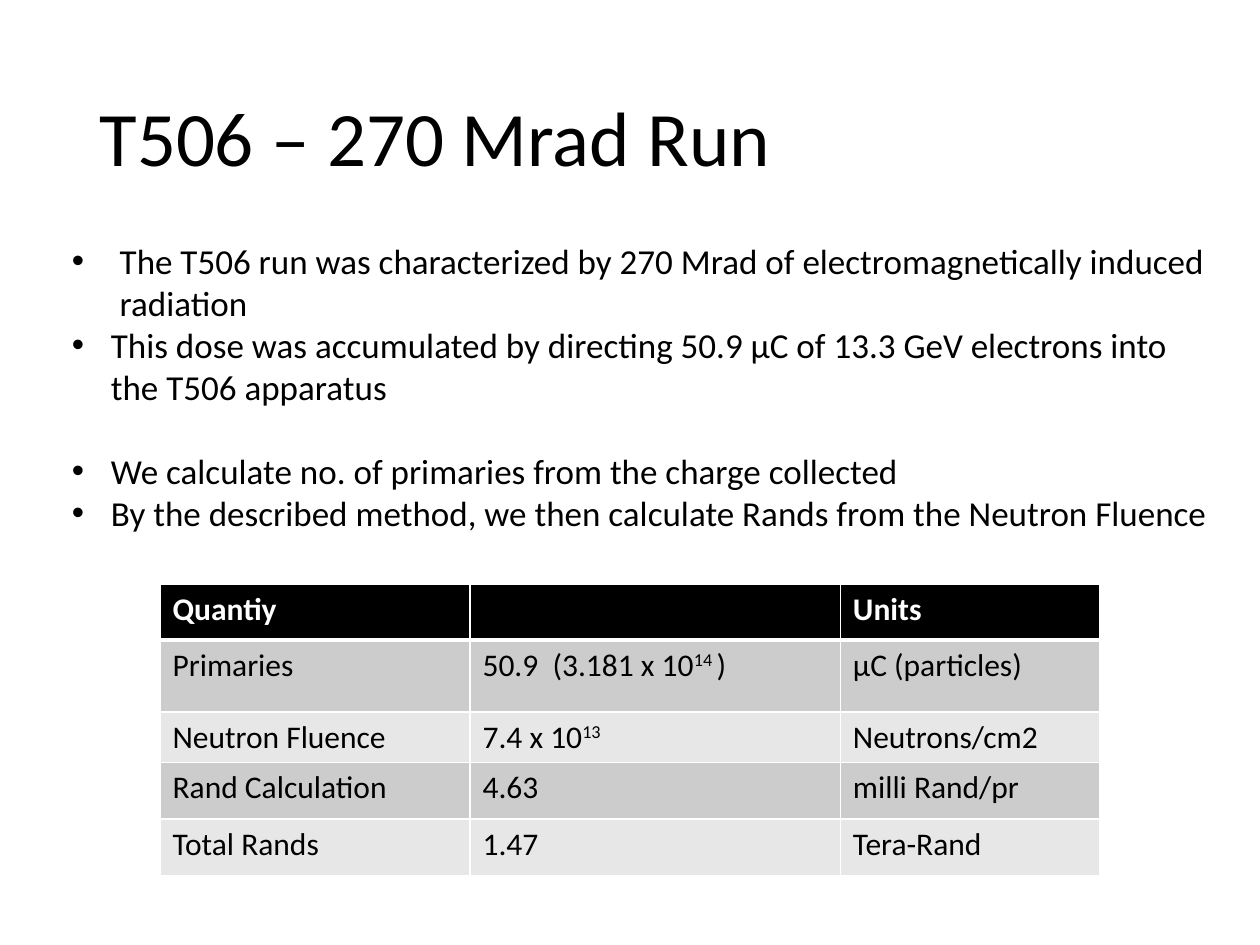
"""Build the slide on the T506 run with its bullet list and results table."""
from lxml.etree import SubElement
from pptx import Presentation
from pptx.dml.color import RGBColor
from pptx.enum.text import MSO_ANCHOR, MSO_AUTO_SIZE, PP_ALIGN
from pptx.oxml.ns import qn
from pptx.util import Inches, Pt

TITLE = "T506 – 270 Mrad Run"
POINTS = [
    ("The T506 run was characterized by 270 Mrad of electromagnetically induced radiation", 0.38, 0),
    ("This dose was accumulated by directing 50.9 μC of 13.3 GeV electrons into the T506 apparatus", 0.31, 0),
    ("We calculate no. of primaries from the charge collected", 0.31, 24),
    ("By the described method, we then calculate Rands from the Neutron Fluence", 0.31, 0),
]
RESULTS = [
    ("Quantiy", "", "Units"),
    ("Primaries", "50.9  (3.181 x 10^14 ^)", "μC (particles)"),
    ("Neutron Fluence", "7.4 x 10^13", "Neutrons/cm2"),
    ("Rand Calculation", "4.63", "milli Rand/pr"),
    ("Total Rands", "1.47", "Tera-Rand"),
]
COLUMN_WIDTHS = [2.46, 2.94, 2.06]
ROW_HEIGHTS = [0.44, 0.57, 0.4, 0.45, 0.45]
BLACK, WHITE = "000000", "FFFFFF"
BANDS = ["E7E7E7", "CCCCCC"]


def color(value):
    return RGBColor.from_string(value)


class SlideBuilder:
    font_name = "Calibri"

    def __init__(self, slide):
        self.slide = slide

    def style(self, paragraph, size, ink=BLACK, bold=False):
        font = paragraph.font
        font.name, font.size, font.bold = self.font_name, Pt(size), bold
        font.color.rgb = color(ink)

    def place(self, shape, left, top, width, height):
        shape.left, shape.top = Inches(left), Inches(top)
        shape.width, shape.height = Inches(width), Inches(height)

    def title(self, text, *box):
        heading = self.slide.shapes.title
        self.place(heading, *box)
        frame = heading.text_frame
        frame.text = text
        frame.auto_size = MSO_AUTO_SIZE.NONE
        frame.vertical_anchor = MSO_ANCHOR.MIDDLE
        paragraph = frame.paragraphs[0]
        paragraph.alignment = PP_ALIGN.LEFT
        paragraph.line_spacing = 0.9
        self.style(paragraph, 44)

    def bullets(self, points, *box):
        body = self.slide.placeholders[1]
        self.place(body, *box)
        frame = body.text_frame
        frame.text = "\n".join(text for text, _, _ in points)
        frame.auto_size = MSO_AUTO_SIZE.SHAPE_TO_FIT_TEXT
        frame.vertical_anchor = MSO_ANCHOR.TOP
        for paragraph, (_, indent, gap) in zip(frame.paragraphs, points):
            paragraph.space_before = Pt(gap)
            self.style(paragraph, 20)
            properties = paragraph._p.get_or_add_pPr()
            properties.set("marL", str(Inches(indent)))
            properties.set("indent", str(-Inches(indent)))

    def table(self, rows, widths, heights, left, top):
        grid = self.slide.shapes.add_table(
            len(rows), len(widths), Inches(left), Inches(top),
            Inches(sum(widths)), Inches(sum(heights))).table
        for column, width in zip(grid.columns, widths):
            column.width = Inches(width)
        for index, (row, height) in enumerate(zip(grid.rows, heights)):
            row.height = Inches(height)
            for cell, text in zip(row.cells, rows[index]):
                self.cell(cell, text, index)

    def cell(self, cell, text, row):
        header = row == 0
        for side in "LRTB":
            thick = (header and side == "B") or (row == 1 and side == "T")
            self.border(cell, side, 3 if thick else 1)
        cell.fill.solid()
        cell.fill.fore_color.rgb = color(BLACK if header else BANDS[row % 2])
        paragraph = cell.text_frame.paragraphs[0]
        self.style(paragraph, 18, WHITE if header else BLACK, header)
        for index, part in enumerate(text.split("^") if text else []):
            run = paragraph.add_run()
            run.text = part
            if index % 2:
                run._r.get_or_add_rPr().set("baseline", "30000")

    def border(self, cell, side, width):
        line = SubElement(cell._tc.get_or_add_tcPr(), qn(f"a:ln{side}"), w=str(Pt(width)))
        SubElement(SubElement(line, qn("a:solidFill")), qn("a:srgbClr"), val=WHITE)


def main():
    presentation = Presentation()
    presentation.slide_width, presentation.slide_height = Inches(10), Inches(7.5)
    builder = SlideBuilder(presentation.slides.add_slide(presentation.slide_layouts[1]))
    builder.title(TITLE, 0.69, 0.4, 8.62, 1.45)
    builder.bullets(POINTS, 0.47, 1.85, 9.31, 2.79)
    builder.table(RESULTS, COLUMN_WIDTHS, ROW_HEIGHTS, 1.27, 4.64)
    presentation.save("out.pptx")


if __name__ == "__main__":
    main()
